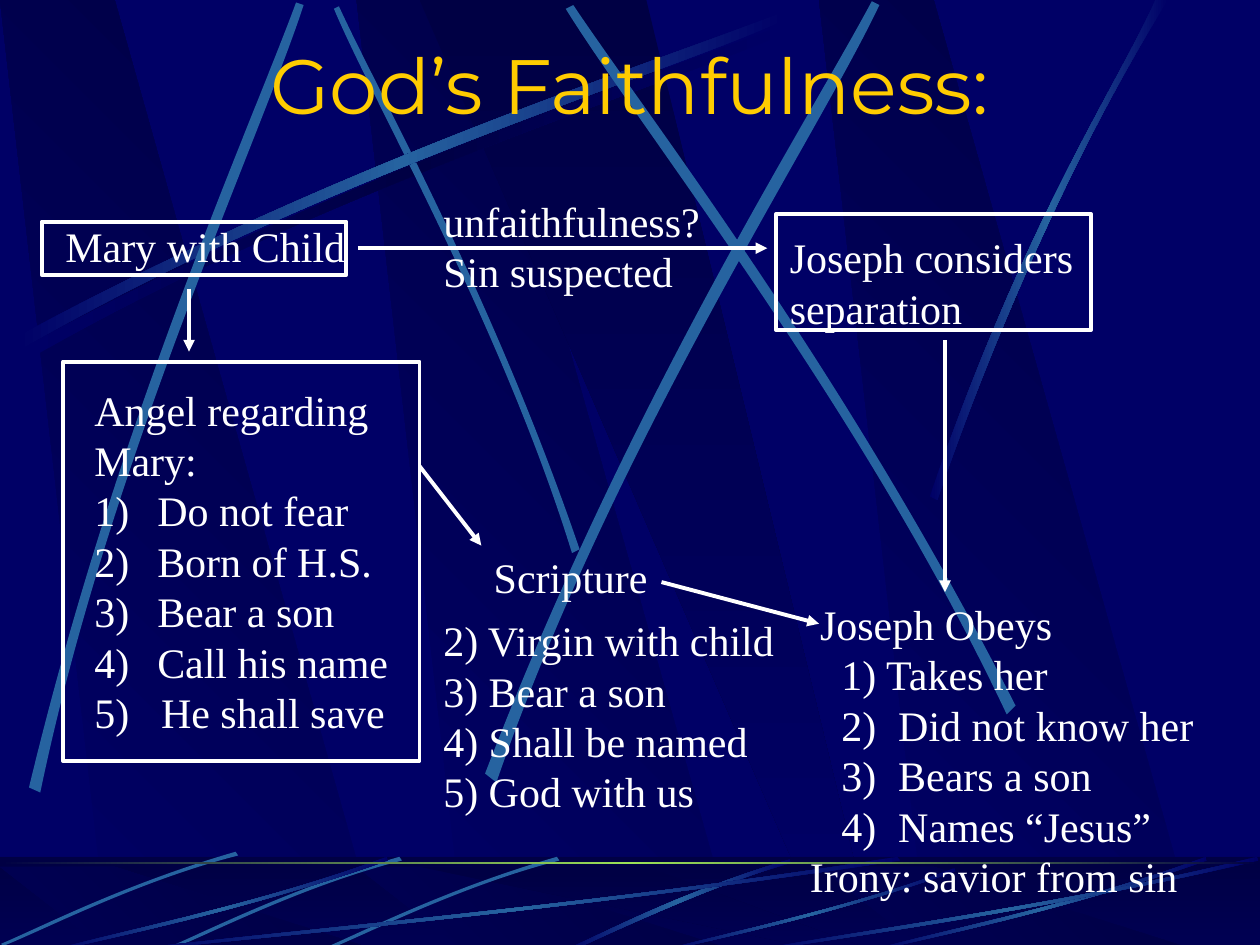
from dataclasses import dataclass
from lxml import etree
from pptx import Presentation
from pptx.dml.color import RGBColor
from pptx.enum.shapes import MSO_CONNECTOR, MSO_SHAPE
from pptx.enum.text import MSO_ANCHOR, PP_ALIGN
from pptx.oxml.ns import qn
from pptx.util import Inches, Pt

RECT = MSO_SHAPE.RECTANGLE
LINE = MSO_CONNECTOR.STRAIGHT
MIDDLE = MSO_ANCHOR.MIDDLE
CENTER = PP_ALIGN.CENTER

NAVY = RGBColor(0x00, 0x00, 0x66)
DARK = RGBColor(0x00, 0x00, 0x44)
BLUE = RGBColor(0x26, 0x63, 0xA0)
LIME = RGBColor(0x9C, 0xE1, 0x57)
GOLD = RGBColor(0xFF, 0xCC, 0x00)
WHITE = RGBColor(0xFF, 0xFF, 0xFF)

Point = tuple[float, float]
Curve = tuple[Point, ...]


@dataclass
class Streak:
    out: Curve
    back: Curve
    tone: RGBColor = BLUE
    fade: bool = True

    def fit(self, left: float, top: float, wide: float = 1, high: float = 1) -> "Streak":
        edges = [tuple((left + x * wide, top + y * high) for x, y in edge)
                 for edge in (self.out, self.back)]
        return Streak(*edges, self.tone, self.fade)


@dataclass
class Item:
    text: str
    left: float = 0
    hang: float = 0
    start: int = 0


@dataclass
class Note:
    area: tuple[float, float, float, float]
    items: list[Item]
    wrap: bool = False


ARC = Streak(((0.14, 2.67), (2.78, 1.25), (5.18, 0.51), (6.2, 0.1)),
             ((6.23, 0.16), (5.22, 0.61), (2.48, 1.43), (0.17, 2.77)))
SHADE = ARC.fit(0.06, 0.08)
SHADE.tone = DARK
BEAMS = [
    SHADE,
    Streak(((4.6, 4.36), (3.91, 2.34), (3.02, 0.77), (2.69, 0.05)),
           ((2.65, 0.07), (2.95, 0.79), (3.98, 2.58), (4.54, 4.39)), fade=False),
    ARC,
    Streak(((0.23, 6.25), (0.93, 3.34), (1.97, 1.05), (2.35, 0.02)),
           ((2.41, 0.04), (2.07, 1.09), (0.86, 3.68), (0.32, 6.29)), fade=False),
    Streak(((3.85, 6.14), (4.98, 3.2), (6.38, 1.02), (6.92, 0.01)),
           ((6.98, 0.04), (6.49, 1.08), (4.86, 3.55), (3.94, 6.21)), fade=False),
    Streak(((8.06, 5.6), (6.7, 2.93), (5.16, 0.95), (4.55, 0.04)),
           ((4.49, 0.07), (5.07, 1.01), (6.85, 3.25), (7.99, 5.67)), fade=False),
    Streak(((7.38, 3.94), (8.14, 1.73), (8.88, 0.66), (9.17, 0)),
           ((9.27, 0), (8.36, 1.45), (7.69, 3.22), (7.44, 3.97))),
]
TWIG = Streak(((1.86, 0.04), (0.99, 0.29), (0.31, 0.64), (0, 0.77)),
              ((0.01, 0.79), (0.32, 0.67), (1.09, 0.27), (1.88, 0.07)), fade=False)
RAY = Streak(((2.66, 0.03), (1.51, 0.43), (0.46, 0.64), (0.01, 0.75)),
             ((0, 0.74), (0.44, 0.61), (1.64, 0.38), (2.65, 0)))
ROOTS = [
    Streak(((6.27, 6.82), (5.37, 7.09), (4.77, 7.42), (4.48, 7.54)),
           ((4.53, 7.55), (4.9, 7.38), (5.71, 7), (6.28, 6.85))),
    *(TWIG.fit(left, top) for left, top in ((2.56, 6.76), (1.31, 6.76), (0.01, 6.72))),
    *(RAY.fit(left, top, wide, high) for left, top, wide, high in (
        (1, 6.8, 2.31, 1), (0.42, 6.8, 1, 1), (5.27, 6.89, 0.87, 0.88),
        (6.92, 6.8, 1, 1), (6, 6.8, 1.5, 1))),
]

NOTES = [
    Note((0.42, 1.7, 2.42, 0.5), [Item("Mary with Child")]),
    Note((6.17, 1.79, 2.53, 0.9), [Item("Joseph considers"), Item("separation")]),
    Note((0.65, 3, 2.53, 2.9), [
        Item("Angel regarding", 0.5, 0.5), Item("Mary:", 0.5, 0.5),
        Item("Do not fear", 0.5, 0.5, 1), Item("Born of H.S.", 0.5, 0.5, 1),
        Item("Bear a son", 0.5, 0.5, 3), Item("Call his name", 0.5, 0.5, 4),
        Item("5)\tHe shall save", 0.53, 0.53)]),
    Note((3.82, 4.33, 1.42, 0.5), [Item("Scripture")]),
    Note((6.33, 4.7, 3.25, 2.52), [
        Item("Joseph Obeys", 0.08), Item("1) Takes her", 0.25),
        Item("2)\tDid not know her", 0.7, 0.45), Item("3)\tBears a son", 0.7, 0.45),
        Item("4)\tNames “Jesus”", 0.7, 0.45), Item("Irony: savior from sin")], True),
    Note((3.42, 1.5, 2.26, 0.91), [Item("unfaithfulness?\nSin suspected")]),
    Note((3.42, 4.83, 3, 1.7), [
        Item("2) Virgin with child"), Item("3) Bear a son"),
        Item("4) Shall be named"), Item("5) God with us")], True),
]
FRAMES = [(0.5, 2.87, 2.83, 3.17), (0.33, 1.76, 2.42, 0.42), (6.16, 1.7, 2.5, 0.92)]
ARROWS = [(1.5, 2.29, 1.5, 2.79), (3.33, 3.7, 3.82, 4.33), (5.25, 4.62, 6.5, 4.95),
          (7.5, 2.7, 7.5, 4.7), (2.84, 1.97, 6.09, 1.97)]


def blend(shape, angle: int, *tones: RGBColor) -> None:
    shape.fill.gradient()
    shape.fill.gradient_angle = angle
    stops = shape._element.spPr.find(".//" + qn("a:gsLst"))
    for stop in list(stops):
        stops.remove(stop)
    for i, tone in enumerate(tones):
        stop = etree.SubElement(stops, qn("a:gs"), pos=str(100000 * i // (len(tones) - 1)))
        etree.SubElement(stop, qn("a:srgbClr"), val=str(tone))


def plain(shape):
    shape.shadow.inherit = False
    shape.line.fill.background()
    return shape


def outline(shapes, points: Curve):
    spots = [(Inches(x), Inches(y)) for x, y in points]
    pen = shapes.build_freeform(*spots[0])
    pen.add_line_segments(spots[1:], close=True)
    return plain(pen.convert_to_shape())


def bend(shape) -> None:
    trace = shape._element.spPr.find(".//" + qn("a:path"))
    legs = trace.findall(qn("a:lnTo"))
    for trio in (legs[:3], legs[4:7]):
        curve = etree.Element(qn("a:cubicBezTo"))
        trio[0].addprevious(curve)
        for leg in trio:
            curve.append(leg[0])
            trace.remove(leg)


def draw_streak(shapes, streak: Streak) -> None:
    shape = outline(shapes, streak.out + streak.back)
    bend(shape)
    if streak.fade:
        blend(shape, 0, NAVY, streak.tone, NAVY)
    else:
        shape.fill.solid()
        shape.fill.fore_color.rgb = streak.tone


def draw_panes(shapes, top: float, base: float) -> None:
    for left in (2.83, 0, 6.5):
        pane = outline(shapes, ((left + 0.86, base), (left + 3.02, base),
                                (left + 0.91, top), (left, top)))
        blend(pane, 45, NAVY, DARK)
    wedge = outline(shapes, ((3.33, top), (6.58, base), (6.94, base), (5.13, top)))
    blend(wedge, 270, DARK, NAVY)


def draw_bar(shapes, top: float, high: float):
    return plain(shapes.add_shape(RECT, 0, Inches(top), Inches(10), Inches(high)))


def draw_scene(slide) -> None:
    group = slide.shapes.add_group_shape()
    shapes = group.shapes
    draw_panes(shapes, 0, 7.5)
    for beam in BEAMS:
        draw_streak(shapes, beam)
    blend(draw_bar(shapes, 6.8, 0.75), 270, DARK, NAVY)
    draw_panes(shapes, 6.88, 7.55)
    veil = draw_bar(shapes, 6.8, 0.75)
    veil.fill.solid()
    veil.fill.fore_color.rgb = DARK
    tint = veil._element.spPr.find(qn("a:solidFill")).find(qn("a:srgbClr"))
    etree.SubElement(tint, qn("a:alpha"), val="50000")
    for root in ROOTS:
        draw_streak(shapes, root)
    blend(draw_bar(shapes, 6.84, 0.02), 0, DARK, LIME, DARK)
    slide.shapes._spTree.insert(2, group._element)


def style(run, name: str, size: int, tone: RGBColor) -> None:
    run.font.name = name
    run.font.size = Pt(size)
    run.font.color.rgb = tone


def draw_note(shapes, note: Note) -> None:
    frame = shapes.add_textbox(*map(Inches, note.area)).text_frame
    frame.word_wrap = note.wrap
    for i, item in enumerate(note.items):
        line = frame.paragraphs[0] if i == 0 else frame.add_paragraph()
        if item.left:
            props = line._p.get_or_add_pPr()
            props.set("marL", str(Inches(item.left)))
            props.set("indent", str(-Inches(item.hang)))
            if item.start:
                mark = etree.SubElement(props, qn("a:buAutoNum"), type="arabicParenR")
                if item.start > 1:
                    mark.set("startAt", str(item.start))
        for j, text in enumerate(item.text.split("\n")):
            if j:
                line.add_line_break()
            run = line.add_run()
            run.text = text
            style(run, "Times New Roman", 24, WHITE)


def draw_frame(shapes, area: tuple[float, ...]) -> None:
    box = shapes.add_shape(RECT, *map(Inches, area))
    box.shadow.inherit = False
    box.fill.background()
    box.line.color.rgb = WHITE
    box.line.width = Pt(2.25)


def draw_arrow(shapes, ends: tuple[float, ...]) -> None:
    arrow = shapes.add_connector(LINE, *map(Inches, ends))
    arrow.line.color.rgb = WHITE
    arrow.line.width = Pt(2.25)
    etree.SubElement(arrow.line._get_or_add_ln(), qn("a:tailEnd"), type="triangle")
    etree.SubElement(arrow._element.spPr, qn("a:effectLst"))


def main() -> None:
    deck = Presentation()
    deck.slide_width, deck.slide_height = Inches(10), Inches(7.5)
    slide = deck.slides.add_slide(deck.slide_layouts[5])
    slide.background.fill.solid()
    slide.background.fill.fore_color.rgb = NAVY
    draw_scene(slide)
    title = slide.shapes.title
    title.left, title.top, title.width, title.height = map(Inches, (0.75, 0.25, 8.5, 0.83))
    title.text_frame.vertical_anchor = MIDDLE
    line = title.text_frame.paragraphs[0]
    line.alignment = CENTER
    run = line.add_run()
    run.text = "God’s Faithfulness:"
    style(run, "Montserrat", 44, GOLD)
    for note in NOTES:
        draw_note(slide.shapes, note)
    for area in FRAMES:
        draw_frame(slide.shapes, area)
    for ends in ARROWS:
        draw_arrow(slide.shapes, ends)
    deck.save("out.pptx")


if __name__ == "__main__":
    main()
